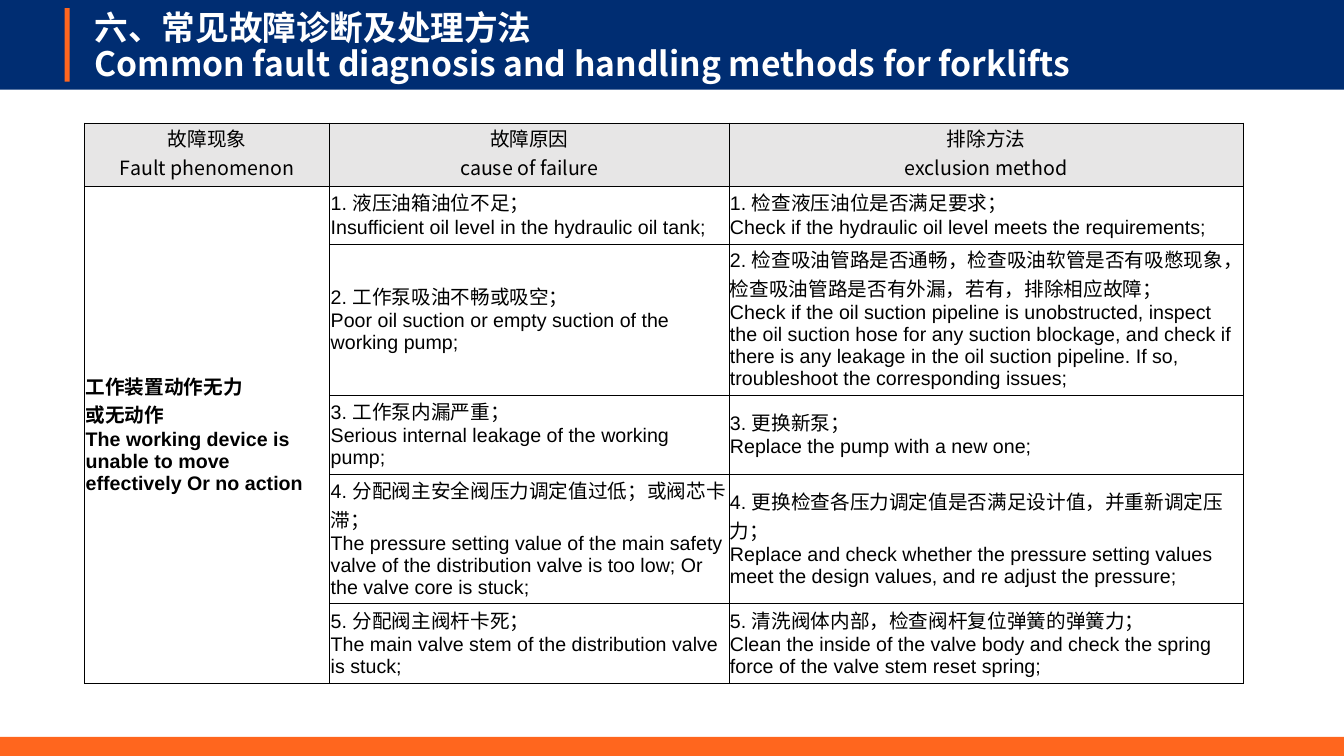
from lxml import etree
from pptx import Presentation
from pptx.dml.color import RGBColor
from pptx.enum.shapes import MSO_SHAPE
from pptx.enum.text import MSO_ANCHOR, PP_ALIGN
from pptx.oxml.ns import qn
from pptx.util import Inches, Pt

RECT = MSO_SHAPE.RECTANGLE
MIDDLE = MSO_ANCHOR.MIDDLE
CENTER, LEFT = PP_ALIGN.CENTER, PP_ALIGN.LEFT

COLORS = {
    "navy": "002D72",
    "accent": "FF661F",
    "footer": "FF661E",
    "head": "E7E6E6",
    "black": "000000",
    "white": "FFFFFF",
}
SANS, CJK = "Arial", "Noto Sans CJK SC"

TITLE = "六、常见故障诊断及处理方法\vCommon fault diagnosis and handling methods for forklifts"
HEADS = [
    ("故障现象", "Fault phenomenon"),
    ("故障原因", "cause of failure"),
    ("排除方法", "exclusion method"),
]
FAULT = ("工作装置动作无力", "或无动作",
         "The working device is unable to move effectively Or no action")
CASES = [
    (("1. 液压油箱油位不足；",
      "Insufficient oil level in the hydraulic oil tank;"),
     ("1. 检查液压油位是否满足要求；",
      "Check if the hydraulic oil level meets the requirements;")),
    (("2. 工作泵吸油不畅或吸空；",
      "Poor oil suction or empty suction of the working pump;"),
     ("2. 检查吸油管路是否通畅，检查吸油软管是否有吸憋现象，检查吸油管路是否有外漏，若有，排除相应故障；",
      "Check if the oil suction pipeline is unobstructed, inspect the oil suction hose "
      "for any suction blockage, and check if there is any leakage in the oil suction "
      "pipeline. If so, troubleshoot the corresponding issues;")),
    (("3. 工作泵内漏严重；",
      "Serious internal leakage of the working pump;"),
     ("3. 更换新泵；",
      "Replace the pump with a new one;")),
    (("4. 分配阀主安全阀压力调定值过低；或阀芯卡滞；",
      "The pressure setting value of the main safety valve of the distribution valve "
      "is too low; Or the valve core is stuck;"),
     ("4. 更换检查各压力调定值是否满足设计值，并重新调定压力；",
      "Replace and check whether the pressure setting values meet the design values, "
      "and re adjust the pressure;")),
    (("5. 分配阀主阀杆卡死；",
      "The main valve stem of the distribution valve is stuck;"),
     ("5. 清洗阀体内部，检查阀杆复位弹簧的弹簧力；",
      "Clean the inside of the valve body and check the spring force of the valve "
      "stem reset spring;")),
]
WIDTHS = [2.43, 3.96, 5.1]
HEIGHTS = [0.63, 0.57, 1.5, 0.79, 1.28, 0.79]


def rgb(name):
    return RGBColor.from_string(COLORS[name])


class Page:
    """Holds the current slide and draws each kind of element in its style."""

    def __init__(self, slide):
        self.slide = slide

    def bar(self, x, y, w, h, color):
        shape = self.slide.shapes.add_shape(RECT, Inches(x), Inches(y), Inches(w), Inches(h))
        shape.shadow.inherit = False
        shape.fill.solid()
        shape.fill.fore_color.rgb = rgb(color)
        shape.line.fill.background()

    def font(self, para, face, size, color, bold):
        font = para.font
        font.name, font.size, font.bold = face, Pt(size), bold
        font.color.rgb = rgb(color)

    def title(self, x, y, w, h, text):
        frame = self.slide.shapes.add_textbox(
            Inches(x), Inches(y), Inches(w), Inches(h)).text_frame
        frame.word_wrap = True
        frame.vertical_anchor = MIDDLE
        frame.text = text
        para = frame.paragraphs[0]
        para.line_spacing = 0.9
        self.font(para, CJK, 24, "white", True)

    def border(self, cell, sides):
        """Set the border widths in points, given in the order L, R, T, B."""
        props = cell._tc.get_or_add_tcPr()
        for side, width in sides.items():
            line = etree.SubElement(props, qn(f"a:ln{side}"), w=str(Pt(width)))
            fill = etree.SubElement(line, qn("a:solidFill"))
            etree.SubElement(fill, qn("a:srgbClr"), val=COLORS["black"])

    def cell(self, cell, lines, faces, align=LEFT, bold=False):
        cell.text = "\n".join(lines)
        for para, face in zip(cell.text_frame.paragraphs, faces):
            para.alignment = align
            self.font(para, face, 14, "black", bold)

    def table(self, x, y, heads, fault, cases):
        grid = self.slide.shapes.add_table(
            len(HEIGHTS), len(WIDTHS), Inches(x), Inches(y),
            Inches(sum(WIDTHS)), Inches(sum(HEIGHTS))).table
        grid.first_row = grid.horz_banding = False
        for col, width in zip(grid.columns, WIDTHS):
            col.width = Inches(width)
        for row, height in zip(grid.rows, HEIGHTS):
            row.height = Inches(height)

        last = len(WIDTHS) - 1
        for r, row in enumerate(grid.rows):
            for c, cell in enumerate(row.cells):
                cell.vertical_anchor = MIDDLE
                cell.margin_left = cell.margin_right = cell.margin_top = Inches(0.01)
                cell.margin_bottom = Inches(0.05)
                self.border(cell, {"L": 1 if c == 0 else 0.5, "R": 1 if c == last else 0.5,
                                   "T": 1 if r == 1 else 0.5, "B": 1 if r == 0 else 0.5})
                if r == 0:
                    cell.fill.solid()
                    cell.fill.fore_color.rgb = rgb("head")
                    self.cell(cell, heads[c], (SANS, CJK), CENTER)
                else:
                    cell.fill.background()
                    if c > 0:
                        self.cell(cell, cases[r - 1][c - 1], (SANS, SANS))
        grid.cell(1, 0).merge(grid.cell(len(cases), 0))
        self.cell(grid.cell(1, 0), fault, [SANS] * len(fault), bold=True)


def main():
    deck = Presentation()
    deck.slide_width, deck.slide_height = Inches(13.33), Inches(7.5)
    page = Page(deck.slides.add_slide(deck.slide_layouts[6]))
    page.bar(0, 0, 13.33, 0.89, "navy")
    page.bar(0.64, 0.08, 0.05, 0.73, "accent")
    page.bar(-0.01, 7.31, 13.34, 0.23, "footer")
    page.title(0.84, 0.12, 11.5, 0.7, TITLE)
    page.table(0.84, 1.22, HEADS, FAULT, CASES)
    deck.save("out.pptx")


if __name__ == "__main__":
    main()
